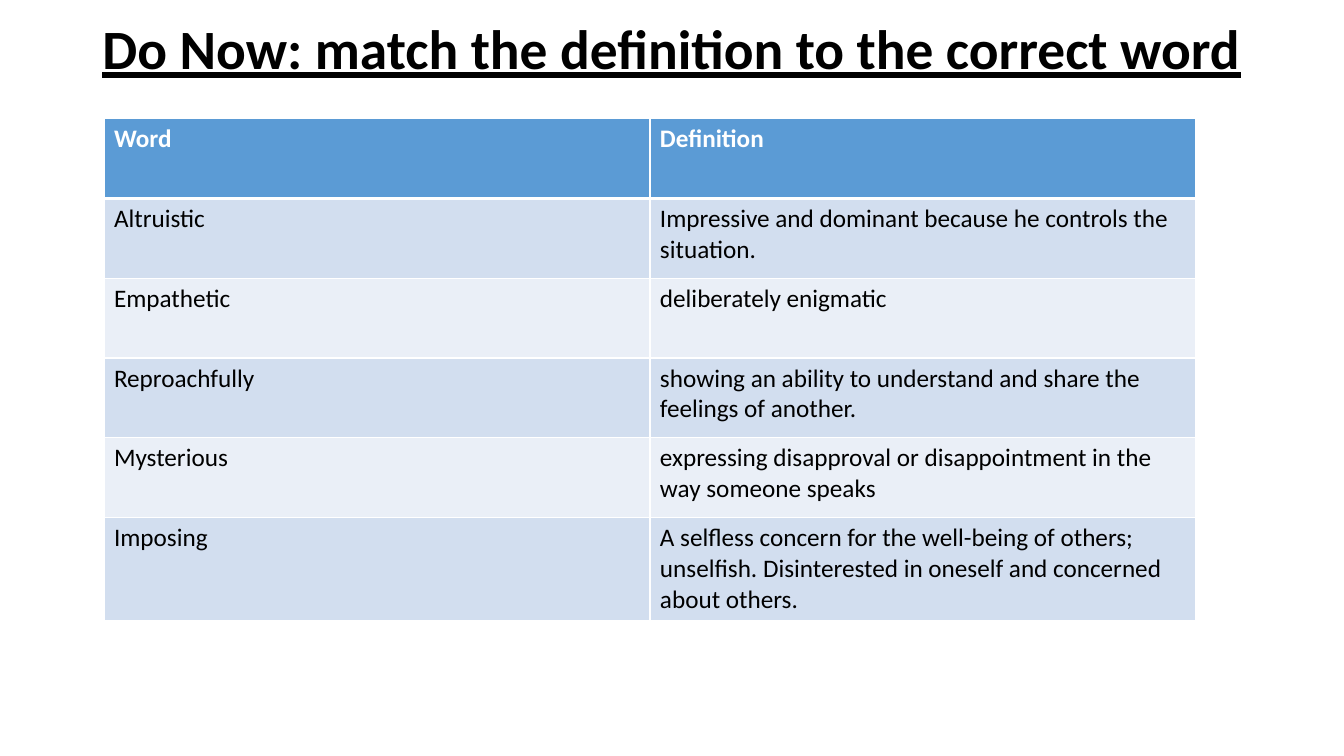
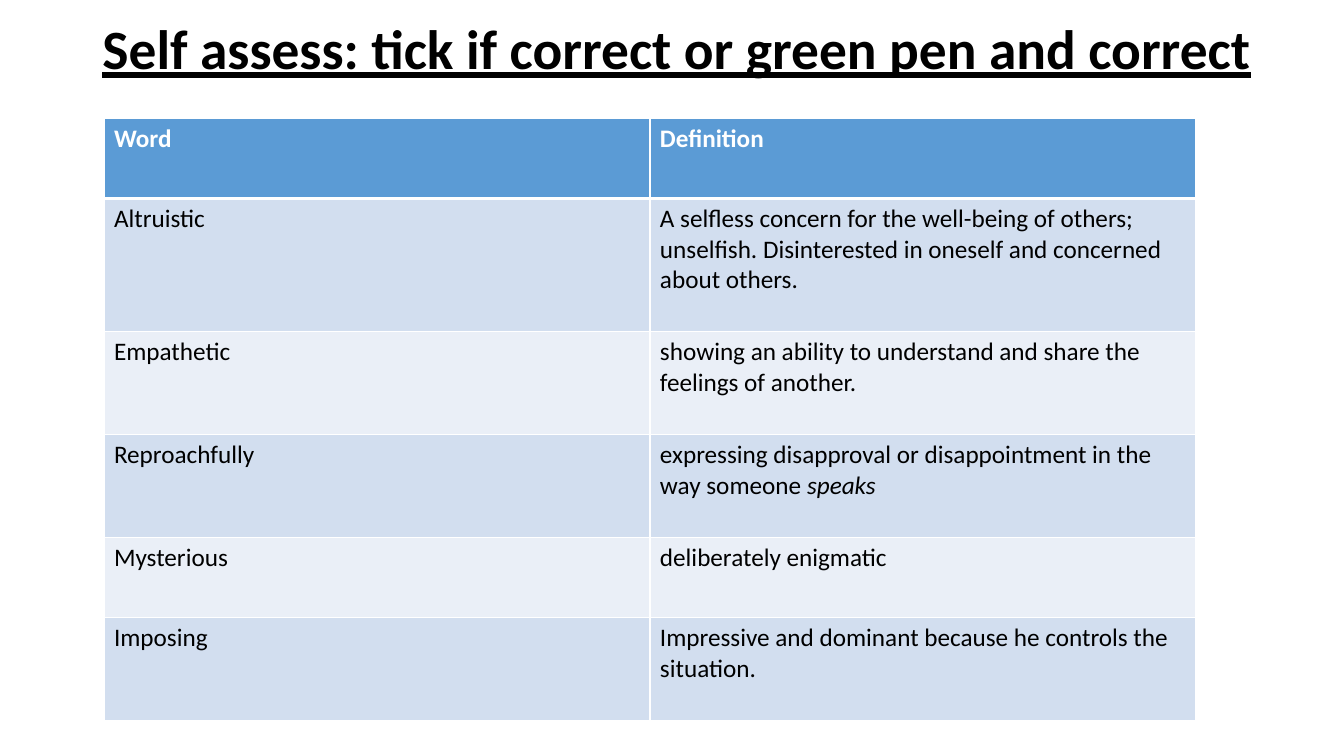
from dataclasses import dataclass

from lxml.etree import SubElement
from pptx import Presentation
from pptx.dml.color import RGBColor
from pptx.enum.text import MSO_ANCHOR as Anchor, MSO_AUTO_SIZE as Fit, PP_ALIGN as Align
from pptx.oxml.ns import qn
from pptx.util import Pt

SCALE = 9525
FONT = "Calibri"
BLACK = RGBColor(0x00, 0x00, 0x00)
WHITE = RGBColor(0xFF, 0xFF, 0xFF)
BLUE = RGBColor(0x5B, 0x9B, 0xD5)
BANDS = (RGBColor(0xD2, 0xDE, 0xEF), RGBColor(0xEA, 0xEF, 0xF7))
THIN, THICK = 1, 3
WIDE = 520

SELFLESS = (
    "A selfless concern for the well-being of others; unselfish. "
    "Disinterested in oneself and concerned about others."
)
SHARING = "showing an ability to understand and share the feelings of another."
SCOLDING = "expressing disapproval or disappointment in the way someone "
HIDDEN = "deliberately enigmatic"
STRONG = "Impressive and dominant because he controls the situation."


@dataclass(frozen=True)
class Entry:
    word: str
    text: str
    high: int = 76
    slant: str = ""


@dataclass(frozen=True)
class Page:
    title: str
    rows: tuple[Entry, ...]


HEAD = Entry("Word", "Definition")
PAGES = (
    Page("Do Now: match the definition to the correct word", (
        Entry("Altruistic", STRONG),
        Entry("Empathetic", HIDDEN),
        Entry("Reproachfully", SHARING),
        Entry("Mysterious", SCOLDING + "speaks"),
        Entry("Imposing", SELFLESS, 98),
    )),
    Page("Self assess: tick if correct or green pen and correct", (
        Entry("Altruistic", SELFLESS, 127),
        Entry("Empathetic", SHARING, 98),
        Entry("Reproachfully", SCOLDING, 98, slant="speaks"),
        Entry("Mysterious", HIDDEN),
        Entry("Imposing", STRONG, 98),
    )),
)


def px(count: int) -> int:
    return count * SCALE


def write(frame, text: str, *, size: float = 18, color: RGBColor = BLACK,
          bold: bool = False, under: bool = False, slant: str = "",
          space: float = 1.0) -> None:
    para = frame.paragraphs[0]
    para.alignment = Align.LEFT
    para.line_spacing = space
    for part, tilt in ((text, False), (slant, True)):
        if part:
            run = para.add_run()
            run.text = part
            font = run.font
            font.name, font.size, font.color.rgb = FONT, Pt(size), color
            font.bold, font.underline, font.italic = bold, under, tilt


def edge(cell, top: int, base: int) -> None:
    props = cell._tc.get_or_add_tcPr()
    for side, width in (("L", THIN), ("R", THIN), ("T", top), ("B", base)):
        line = SubElement(props, qn(f"a:ln{side}"), w=str(Pt(width)))
        fill = SubElement(line, qn("a:solidFill"))
        SubElement(fill, qn("a:srgbClr"), val=str(WHITE))


def add_title(slide, text: str) -> None:
    title = slide.shapes.title
    title.left, title.top, title.width, title.height = map(px, (88, 16, 1104, 66))
    frame = title.text_frame
    frame.word_wrap = True
    frame.auto_size = Fit.NONE
    frame.vertical_anchor = Anchor.MIDDLE
    frame.margin_right = 0
    write(frame, text, size=39.6, bold=True, under=True, space=0.9)


def add_grid(slide, rows: tuple[Entry, ...]) -> None:
    items = (HEAD, *rows)
    high = sum(item.high for item in items)
    grid = slide.shapes.add_table(
        len(items), 2, px(99), px(113), px(2 * WIDE), px(high)).table
    for col in grid.columns:
        col.width = px(WIDE)
    for at, item in enumerate(items):
        grid.rows[at].height = px(item.high)
        head = at == 0
        for col, text in enumerate((item.word, item.text)):
            cell = grid.cell(at, col)
            edge(cell, THICK if at == 1 else THIN, THICK if head else THIN)
            cell.fill.solid()
            cell.fill.fore_color.rgb = BLUE if head else BANDS[(at - 1) % 2]
            write(cell.text_frame, text, color=WHITE if head else BLACK,
                  bold=head, slant=item.slant if col else "")


def main() -> None:
    deck = Presentation()
    deck.slide_width, deck.slide_height = px(1280), px(720)
    for page in PAGES:
        slide = deck.slides.add_slide(deck.slide_layouts[5])
        add_title(slide, page.title)
        add_grid(slide, page.rows)
    deck.save("out.pptx")


if __name__ == "__main__":
    main()
